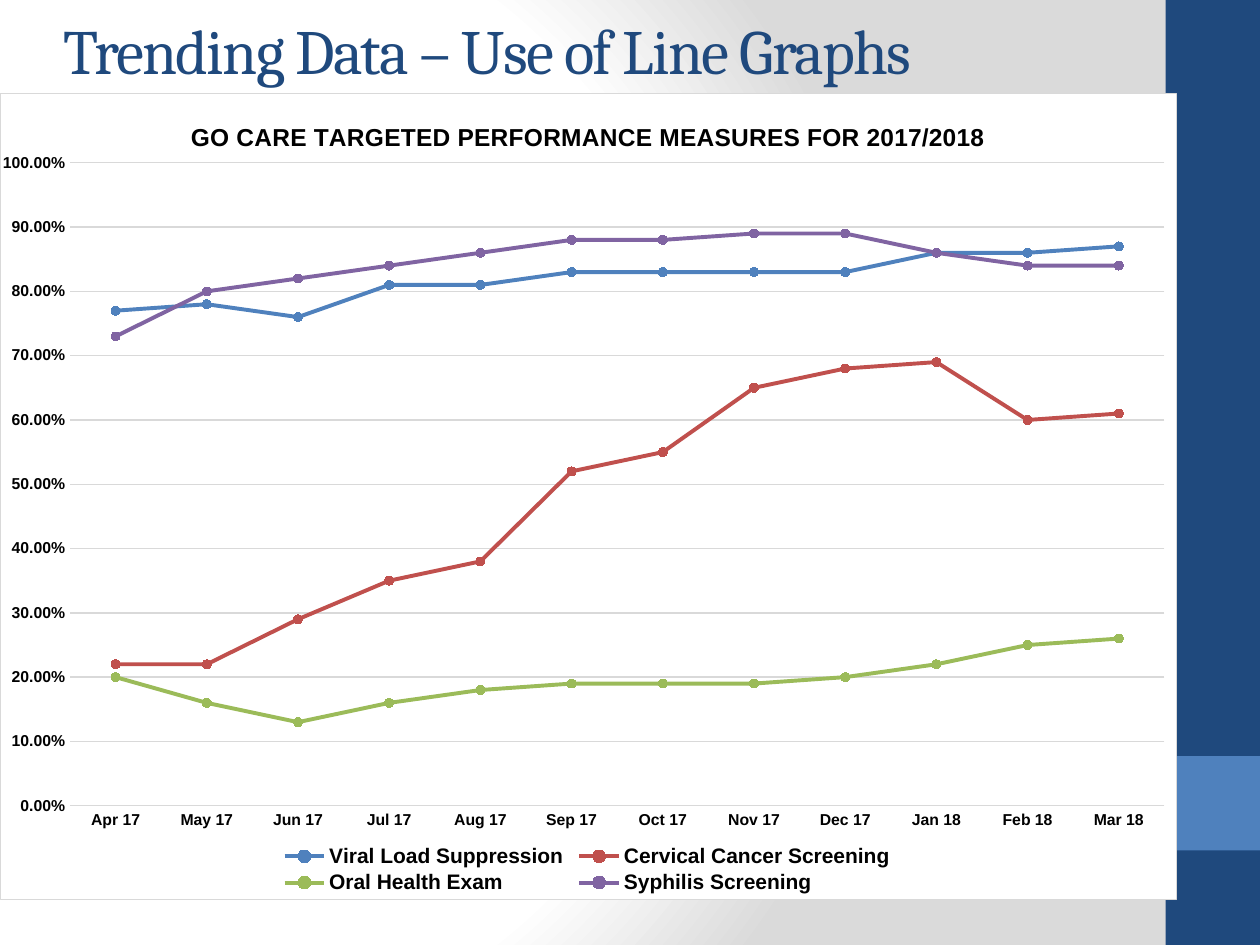
"""Builds a slide with a line chart of monthly performance measures."""
from pptx import Presentation
from pptx.chart.data import CategoryChartData
from pptx.dml.color import RGBColor
from pptx.enum.chart import XL_CHART_TYPE as ChartType, XL_LEGEND_POSITION as LegendPosition
from pptx.enum.chart import XL_MARKER_STYLE as MarkerStyle, XL_TICK_MARK as TickMark
from pptx.enum.shapes import MSO_SHAPE as Shape
from pptx.enum.text import MSO_ANCHOR as Anchor, PP_ALIGN as Align
from pptx.oxml import parse_xml
from pptx.oxml.ns import nsdecls, qn
from pptx.util import Pt

color = RGBColor.from_string
NAVY, BLUE, GRAY, BLACK = "1F497D", "4F81BD", "D9D9D9", "000000"


def write(frame, text, font, size, fill, bold=False, align=None, spacing=None):
    para = frame.paragraphs[0]
    para.alignment = align
    span = para.add_run()
    span.text = text
    span.font.name, span.font.size, span.font.bold = font, Pt(size), bold
    span.font.color.rgb = color(fill)
    if spacing is not None:
        span.font._element.set("spc", str(spacing))


def place(part, index, target="", **percents):
    for old in part.findall(qn("c:layout")):
        part.remove(old)
    modes = "".join(f'<c:{side}Mode val="edge"/>' for side in "xy")
    values = "".join(f'<c:{side} val="{value / 100:.4f}"/>' for side, value in percents.items())
    part.insert(index, parse_xml(
        f'<c:layout {nsdecls("c")}><c:manualLayout>{target}{modes}{values}'
        '</c:manualLayout></c:layout>'))


deck = Presentation()
deck.slide_width, deck.slide_height = Pt(720), Pt(540)
slide = deck.slides.add_slide(deck.slide_layouts[5])

stops = "".join(f'<a:gs pos="{position * 1000}"><a:srgbClr val="{shade}"/></a:gs>'
                for position, shade in [(0, "FFFFFF"), (75, "FFFFFF"), (100, "DADADA")])
slide._element.cSld.insert(0, parse_xml(
    f'<p:bg {nsdecls("p", "a")}><p:bgPr><a:gradFill rotWithShape="1"><a:gsLst>{stops}</a:gsLst>'
    '<a:path path="circle"><a:fillToRect l="20000" t="50000" r="100000" b="50000"/></a:path>'
    '</a:gradFill><a:effectLst/></p:bgPr></p:bg>'))

for top, height, fill in [(0, 540, NAVY), (432, 54, BLUE)]:
    band = slide.shapes.add_shape(Shape.RECTANGLE, Pt(666), Pt(top), Pt(54), Pt(height))
    band.shadow.inherit = False
    band.fill.solid()
    band.fill.fore_color.rgb = color(fill)
    band.line.fill.background()

title = slide.shapes.title
title.left, title.top, title.width, title.height = Pt(28.8), Pt(12.24), Pt(599.76), Pt(31.68)
title.text_frame.vertical_anchor = Anchor.MIDDLE
write(title.text_frame, "Trending Data – Use of Line Graphs", font="Cambria", size=36,
      fill=NAVY, align=Align.LEFT, spacing=-100)

measures = [
    ("Viral Load Suppression", BLUE,
     [0.77, 0.78, 0.76, 0.81, 0.81, 0.83, 0.83, 0.83, 0.83, 0.86, 0.86, 0.87]),
    ("Cervical Cancer Screening", "C0504D",
     [0.22, 0.22, 0.29, 0.35, 0.38, 0.52, 0.55, 0.65, 0.68, 0.69, 0.6, 0.61]),
    ("Oral Health Exam", "9BBB59",
     [0.2, 0.16, 0.13, 0.16, 0.18, 0.19, 0.19, 0.19, 0.2, 0.22, 0.25, 0.26]),
    ("Syphilis Screening", "8064A2",
     [0.73, 0.8, 0.82, 0.84, 0.86, 0.88, 0.88, 0.89, 0.89, 0.86, 0.84, 0.84]),
]
data = CategoryChartData(number_format="0.00%")
data.categories = ["Apr 17", "May 17", "Jun 17", "Jul 17", "Aug 17", "Sep 17",
                   "Oct 17", "Nov 17", "Dec 17", "Jan 18", "Feb 18", "Mar 18"]
for name, shade, values in measures:
    data.add_series(name, values)
chart = slide.shapes.add_chart(ChartType.LINE_MARKERS, Pt(0), Pt(53.1), Pt(672.48), Pt(461.2),
                               data).chart
chart.font.name, chart.font.size = "Calibri", Pt(10)
chart.font.color.rgb = color(BLACK)
chart._chartSpace.find(qn("c:txPr")).addprevious(parse_xml(
    f'<c:spPr {nsdecls("c", "a")}><a:solidFill><a:srgbClr val="FFFFFF"/></a:solidFill>'
    f'<a:ln w="9525"><a:solidFill><a:srgbClr val="{GRAY}"/></a:solidFill></a:ln></c:spPr>'))

chart.has_title = True
write(chart.chart_title.text_frame, "GO CARE TARGETED PERFORMANCE MEASURES FOR 2017/2018",
      font="Arial", size=14, fill=BLACK, bold=True)
chart.chart_title.include_in_layout = False
chart.has_legend = True
chart.legend.position = LegendPosition.BOTTOM
chart.legend.include_in_layout = False

months, rates = chart.category_axis, chart.value_axis
for part, size in [(months.tick_labels, 9), (rates.tick_labels, 9), (chart.legend, 12)]:
    part.font.name, part.font.size, part.font.bold = "Arial", Pt(size), True
    part.font.color.rgb = color(BLACK)
for axis in (months, rates):
    axis.major_tick_mark = axis.minor_tick_mark = TickMark.NONE
rates.minimum_scale, rates.maximum_scale, rates.major_unit = 0, 1, 0.1
rates.tick_labels.number_format = "0.00%"
rates.tick_labels.number_format_is_linked = False
rates.format.line.fill.background()
for rule in (months.format.line, rates.major_gridlines.format.line):
    rule.color.rgb = color(GRAY)
    rule.width = Pt(0.75)

plot = chart.plots[0]
plot.vary_by_categories = False
for series, (name, shade, values) in zip(plot.series, measures):
    series.smooth = False
    series.format.line.color.rgb = color(shade)
    series.format.line.width = Pt(2.25)
    series.marker.style, series.marker.size = MarkerStyle.CIRCLE, 5
    series.marker.format.fill.solid()
    series.marker.format.fill.fore_color.rgb = color(shade)
    series.marker.format.line.color.rgb = color(shade)

place(chart.chart_title._element, 1, x=15.8, y=2.9)
place(chart.legend._element, 1, x=23.4, y=92.8, w=53, h=7)
place(chart._chartSpace.chart.plotArea, 0, target='<c:layoutTarget val="inner"/>',
      x=5.9, y=8.6, w=93.1, h=79.8)

deck.save("out.pptx")
